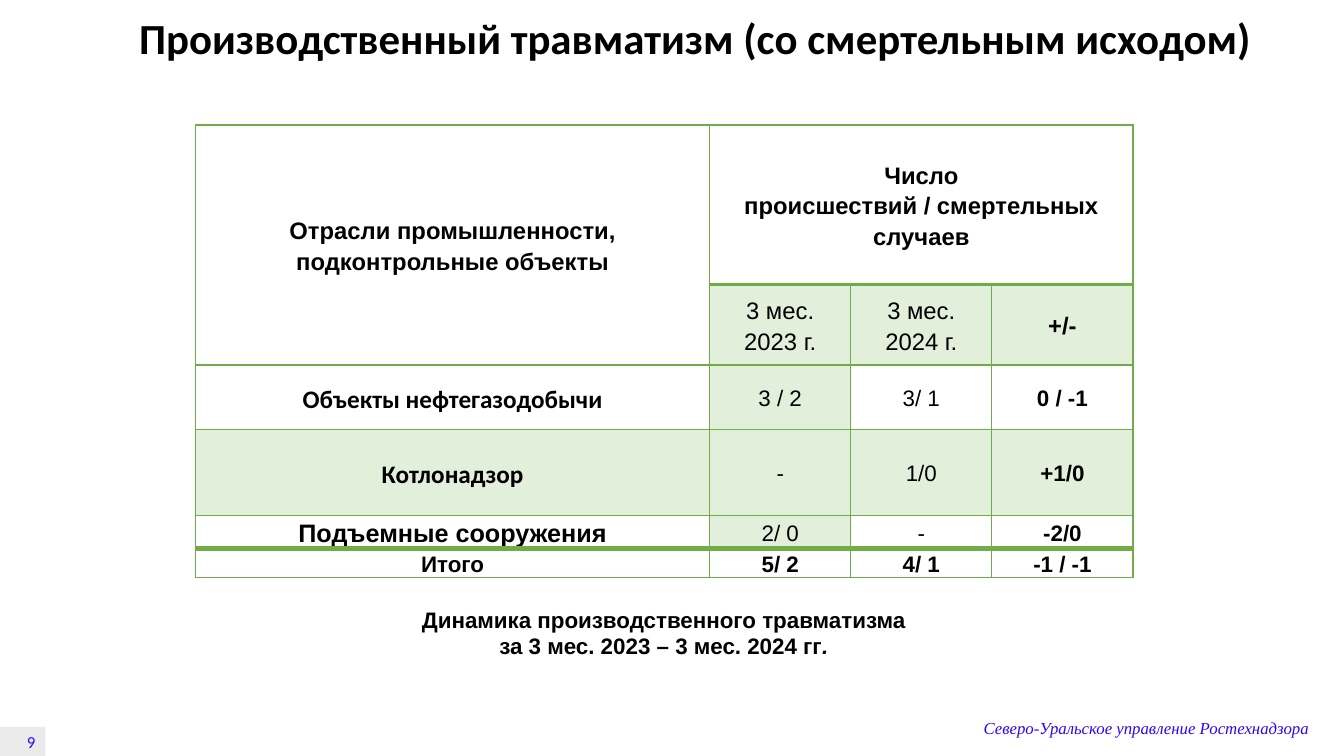
"""Build the slide on fatal workplace injuries."""
from typing import NamedTuple

import lxml.etree
import pptx
import pptx.dml.color
import pptx.enum.shapes
import pptx.enum.text
import pptx.oxml.ns
import pptx.util

Pt = pptx.util.Pt
RGBColor = pptx.dml.color.RGBColor
Align = pptx.enum.text.PP_ALIGN
Anchor = pptx.enum.text.MSO_ANCHOR
qn = pptx.oxml.ns.qn

BLACK = RGBColor(0x00, 0x00, 0x00)
BLUE = RGBColor(0x31, 0x03, 0xF7)
GREEN = RGBColor(0x70, 0xAD, 0x47)
PALE = RGBColor(0xE2, 0xEF, 0xDA)
GREY = RGBColor(0xEA, 0xEA, 0xEA)


class Style(NamedTuple):
    size: float
    bold: bool = False
    face: str = "Arial"
    color: RGBColor = BLACK
    italic: bool = False


class Entry(NamedTuple):
    text: str
    style: Style
    tint: bool = False


HEAD = Style(17, True)
YEAR = Style(17)
NAME = Style(18, True, "Calibri")
PLAIN = Style(16)
BOLD = Style(16, True)

COLS = (367.2, 100.8, 100.8, 100.8)
ROWS = (113.8, 57.6, 46.1, 61.2, 23.8, 19.4)
GRID = (
    (Entry("Отрасли промышленности, подконтрольные объекты", HEAD),
     Entry("Число\nпроисшествий / смертельных случаев", HEAD), None, None),
    (None, Entry("3 мес. 2023 г.", YEAR, True),
     Entry("3 мес. 2024 г.", YEAR, True), Entry("+/-", HEAD, True)),
    (Entry("Объекты нефтегазодобычи", NAME), Entry("3 / 2", PLAIN, True),
     Entry("3/ 1", PLAIN), Entry("0 / -1", BOLD)),
    (Entry("Котлонадзор", NAME, True), Entry("-", PLAIN, True),
     Entry("1/0", PLAIN, True), Entry("+1/0", BOLD, True)),
    (Entry("Подъемные сооружения", Style(18, True)), Entry("2/ 0", PLAIN, True),
     Entry("-", PLAIN), Entry("-2/0", BOLD)),
    (Entry("Итого", BOLD), Entry("5/ 2", BOLD),
     Entry("4/ 1", BOLD), Entry("-1 / -1", BOLD)),
)


def write(frame, text: str, style: Style, align: Align, space: float = 1) -> None:
    frame.text = text
    for para in frame.paragraphs:
        para.alignment = align
        para.line_spacing = space
        font = para.font
        font.size, font.name = Pt(style.size), style.face
        font.bold, font.italic = style.bold, style.italic
        font.color.rgb = style.color


def rule(row: int, col: int) -> float:
    """Return the width of the line above a cell."""
    if row == len(ROWS) - 1:
        return 4
    return 2 if row == 1 or (row, col) == (2, 0) else 1


def border(cell, row: int, col: int) -> None:
    sides = {"L": 1, "R": 1, "T": rule(row, col), "B": rule(row + 1, col)}
    props = cell._tc.get_or_add_tcPr()
    for spot, (side, width) in enumerate(sides.items()):
        line = lxml.etree.Element(qn(f"a:ln{side}"), w=str(Pt(width)))
        fill = lxml.etree.SubElement(line, qn("a:solidFill"))
        lxml.etree.SubElement(fill, qn("a:srgbClr"), val=str(GREEN))
        props.insert(spot, line)


def add_grid(slide) -> None:
    frame = slide.shapes.add_table(len(ROWS), len(COLS), Pt(139.7), Pt(89.3),
                                   Pt(sum(COLS)), Pt(sum(ROWS)))
    table = frame.table
    table.first_row = table.horz_banding = False
    for col, width in zip(table.columns, COLS):
        col.width = Pt(width)
    for row, height in zip(table.rows, ROWS):
        row.height = Pt(height)
    table.cell(0, 0).merge(table.cell(1, 0))
    table.cell(0, 1).merge(table.cell(0, 3))
    for r, line in enumerate(GRID):
        for c, entry in enumerate(line):
            cell = table.cell(r, c)
            cell.margin_left = cell.margin_right = Pt(5)
            cell.margin_top = cell.margin_bottom = Pt(0)
            cell.vertical_anchor = Anchor.MIDDLE
            if entry and entry.tint:
                cell.fill.solid()
                cell.fill.fore_color.rgb = PALE
            else:
                cell.fill.background()
            border(cell, r, c)
            if entry:
                write(cell.text_frame, entry.text, entry.style, Align.CENTER, 1.15)
    table.cell(len(ROWS) - 1, 0).vertical_anchor = Anchor.TOP


def add_title(slide) -> None:
    title = slide.shapes.title
    title.left, title.top = Pt(88.6), Pt(11.5)
    title.width, title.height = Pt(815.8), Pt(34.6)
    frame = title.text_frame
    frame.auto_size = pptx.enum.text.MSO_AUTO_SIZE.NONE
    frame.margin_left = frame.margin_right = Pt(0)
    frame.vertical_anchor = Anchor.MIDDLE
    write(frame, "Производственный травматизм (со смертельным исходом)",
          Style(30.6, True, "Calibri"), Align.CENTER, 0.9)


def add_notes(slide) -> None:
    """Add the caption, the office name and the page number."""
    box = slide.shapes.add_textbox(Pt(139.7), Pt(429.1), Pt(668.9), Pt(46.1))
    box.text_frame.word_wrap = True
    write(box.text_frame, "Динамика производственного травматизма\n"
          "за 3 мес. 2023 – 3 мес. 2024 гг", BOLD, Align.CENTER)
    dot = box.text_frame.paragraphs[-1].add_run()
    dot.text, dot.font.italic = ".", True

    foot = slide.shapes.add_textbox(Pt(695.5), Pt(501.8), Pt(253.4), Pt(36))
    foot.text_frame.word_wrap = True
    foot.text_frame.vertical_anchor = Anchor.MIDDLE
    write(foot.text_frame, "Северо-Уральское управление Ростехнадзора",
          Style(12, False, "Times New Roman", BLUE, True), Align.LEFT)

    page = slide.shapes.add_shape(pptx.enum.shapes.MSO_SHAPE.RECTANGLE,
                                  Pt(0), Pt(519.1), Pt(32.4), Pt(20.9))
    page.shadow.inherit = False
    page.fill.solid()
    page.fill.fore_color.rgb = GREY
    page.line.fill.background()
    page.text_frame.vertical_anchor = Anchor.MIDDLE
    write(page.text_frame, "9", Style(12, False, "Calibri", BLUE), Align.RIGHT)


def main() -> None:
    deck = pptx.Presentation()
    deck.slide_width, deck.slide_height = Pt(960), Pt(540)
    slide = deck.slides.add_slide(deck.slide_layouts[5])
    add_title(slide)
    add_grid(slide)
    add_notes(slide)
    deck.save("out.pptx")


if __name__ == "__main__":
    main()
